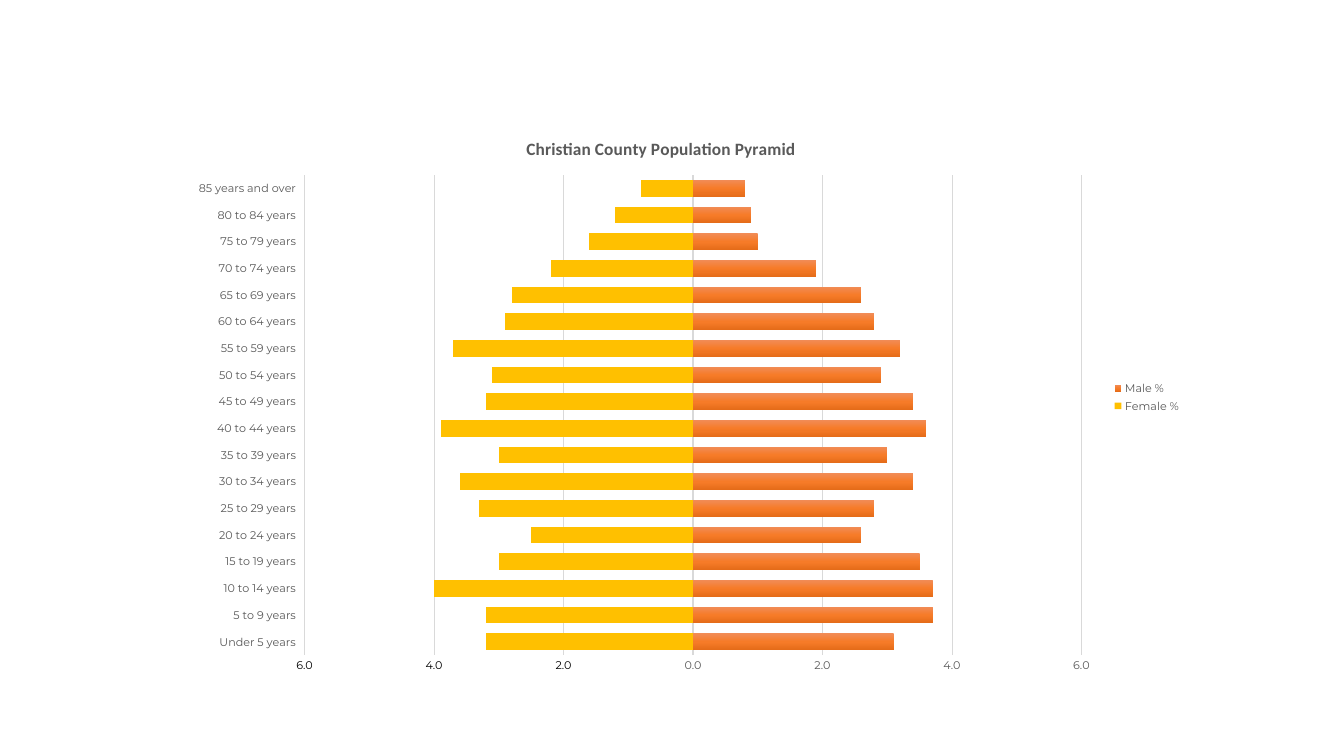
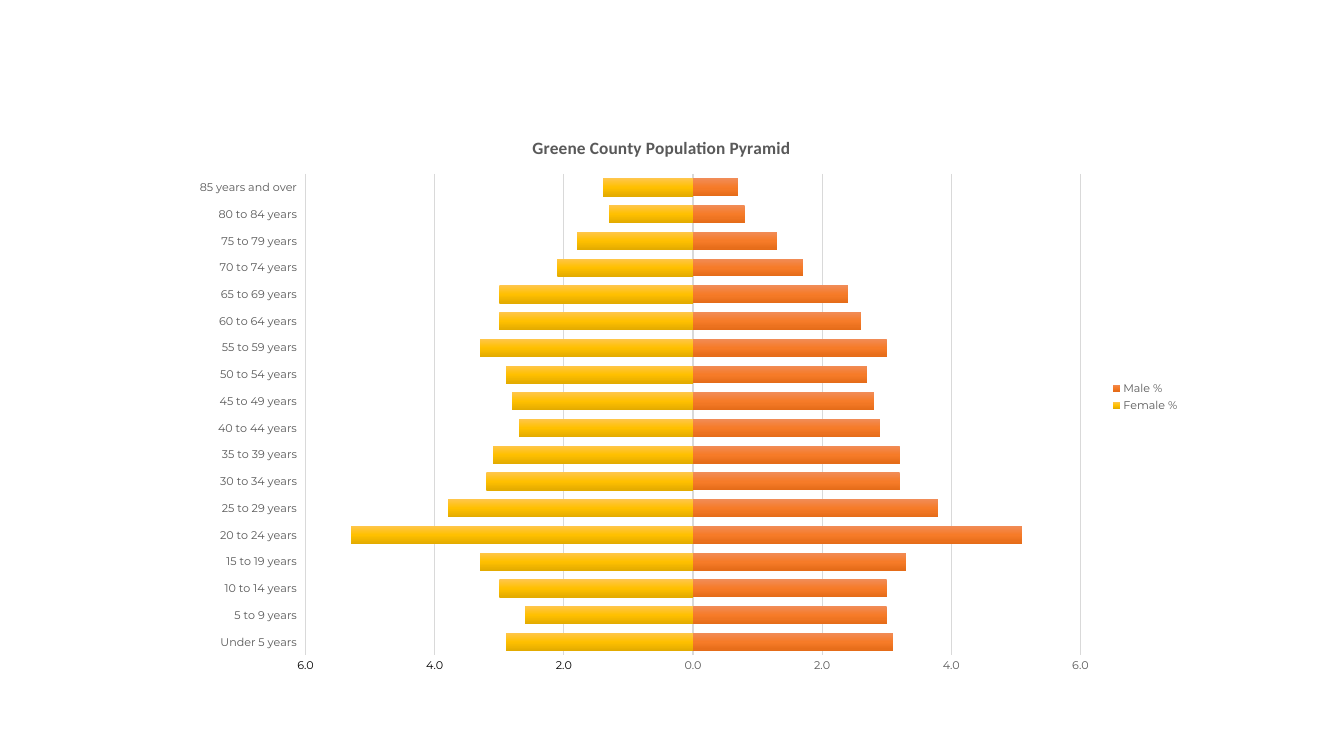
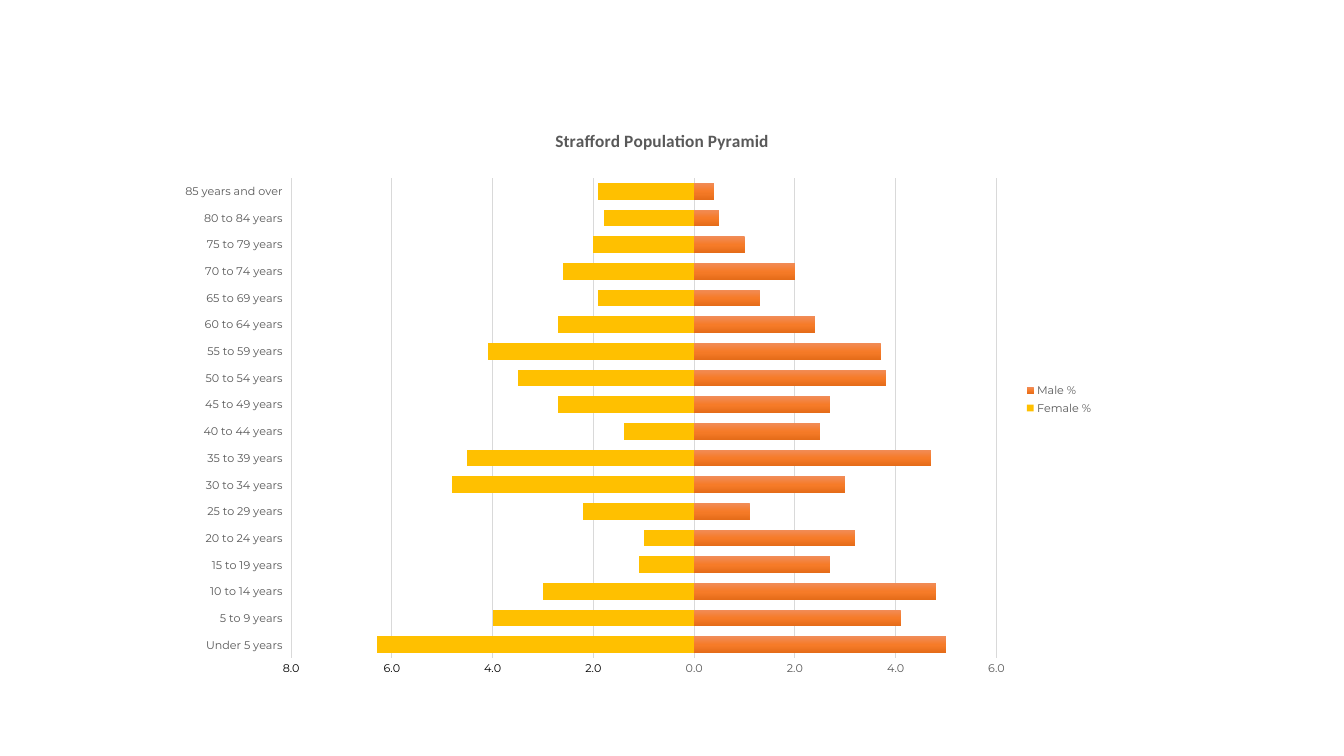
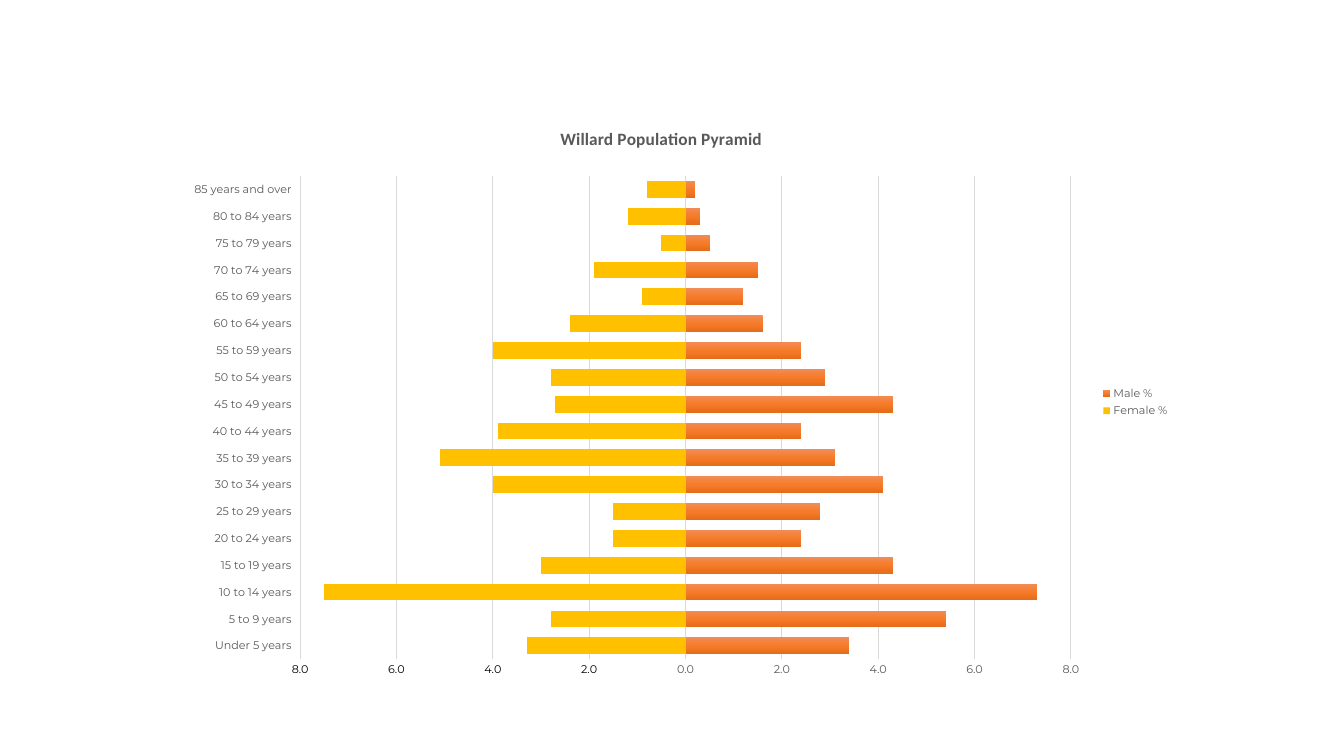
from dataclasses import dataclass

from lxml import etree
from pptx import Presentation
from pptx.chart.data import CategoryChartData
from pptx.dml.color import RGBColor
from pptx.enum.chart import XL_CHART_TYPE, XL_LEGEND_POSITION, XL_TICK_LABEL_POSITION, XL_TICK_MARK
from pptx.oxml.ns import qn
from pptx.util import Pt

BAR_STACKED = XL_CHART_TYPE.BAR_STACKED
LEGEND_RIGHT = XL_LEGEND_POSITION.RIGHT
LABELS_LOW = XL_TICK_LABEL_POSITION.LOW
NO_TICKS = XL_TICK_MARK.NONE

TITLE_FONT = "Calibri"
LABEL_FONT = "Montserrat"
TEXT_GRAY = "595959"
GRID_GRAY = "D9D9D9"
MALE_COLORS = ("F18C57", "F67B28", "E56C19")
FEMALE_COLORS = ("FFC64B", "FFC000", "E3AB00")
FEMALE_PLAIN = ("FFC000",)

AGE_GROUPS = (
    ["Under 5 years"]
    + [f"{age} to {age + 4} years" for age in range(5, 85, 5)]
    + ["85 years and over"]
)


@dataclass(frozen=True)
class Box:
    left: float
    top: float
    width: float
    height: float


@dataclass(frozen=True)
class Pyramid:
    place: str
    frame: Box
    plot: Box
    title_left: float
    title_top: float
    low: int
    high: int
    male: tuple[float, ...]
    female: tuple[float, ...]
    female_colors: tuple[str, ...] = FEMALE_PLAIN
    gap: int = 60


PYRAMIDS = (
    Pyramid(
        "Christian County", Box(125.3, 90, 838, 463), Box(246.6, 141.7, 628.9, 388.7),
        423.5, 108, -6, 6,
        (3.1, 3.7, 3.7, 3.5, 2.6, 2.8, 3.4, 3, 3.6, 3.4, 2.9, 3.2, 2.8, 2.6, 1.9, 1, 0.9, 0.8),
        (3.2, 3.2, 4, 3, 2.5, 3.3, 3.6, 3, 3.9, 3.2, 3.1, 3.7, 2.9, 2.8, 2.2, 1.6, 1.2, 0.8),
    ),
    Pyramid(
        "Greene County", Box(126, 89.3, 836, 463.7), Box(247.4, 140.9, 627.3, 389.6),
        428.5, 107.3, -6, 6,
        (3.1, 3, 3, 3.3, 5.1, 3.8, 3.2, 3.2, 2.9, 2.8, 2.7, 3, 2.6, 2.4, 1.7, 1.3, 0.8, 0.7),
        (2.9, 2.6, 3, 3.3, 5.3, 3.8, 3.2, 3.1, 2.7, 2.8, 2.9, 3.3, 3, 3, 2.1, 1.8, 1.3, 1.4),
        FEMALE_COLORS, 50,
    ),
    Pyramid(
        "Strafford", Box(115.2, 92.2, 777, 462.2), Box(235.7, 144.2, 571, 388.7),
        447, 101.8, -8, 6,
        (5, 4.1, 4.8, 2.7, 3.2, 1.1, 3, 4.7, 2.5, 2.7, 3.8, 3.7, 2.4, 1.3, 2, 1, 0.5, 0.4),
        (6.3, 4, 3, 1.1, 1, 2.2, 4.8, 4.5, 1.4, 2.7, 3.5, 4.1, 2.7, 1.9, 2.6, 2, 1.8, 1.9),
    ),
    Pyramid(
        "Willard", Box(122.4, 93.6, 831.6, 463.7), Box(243, 142.5, 624, 391.2),
        451, 100, -8, 8,
        (3.4, 5.4, 7.3, 4.3, 2.4, 2.8, 4.1, 3.1, 2.4, 4.3, 2.9, 2.4, 1.6, 1.2, 1.5, 0.5, 0.3, 0.2),
        (3.3, 2.8, 7.5, 3, 1.5, 1.5, 4, 5.1, 3.9, 2.7, 2.8, 4, 2.4, 0.9, 1.9, 0.5, 1.2, 0.8),
    ),
)


def rgb(color: str) -> RGBColor:
    return RGBColor.from_string(color)


def style_font(font, name: str, size: float, color: str = TEXT_GRAY, bold: bool = False) -> None:
    font.name = name
    font.size = Pt(size)
    font.bold = bold
    font.color.rgb = rgb(color)


def style_line(line, color: str, width: float) -> None:
    line.color.rgb = rgb(color)
    line.width = Pt(width)


def make_layout(settings: dict[str, str | float]):
    layout = etree.Element(qn("c:layout"))
    manual = etree.SubElement(layout, qn("c:manualLayout"))
    for tag, value in settings.items():
        etree.SubElement(manual, qn(f"c:{tag}")).set("val", str(value))
    return layout


def drop_layout(owner) -> None:
    for layout in owner.findall(qn("c:layout")):
        owner.remove(layout)


def place_plot(chart, plot: Box, frame: Box) -> None:
    area = chart.element.find(".//" + qn("c:plotArea"))
    drop_layout(area)
    area.insert(0, make_layout({
        "layoutTarget": "inner", "xMode": "edge", "yMode": "edge",
        "x": (plot.left - frame.left) / frame.width,
        "y": (plot.top - frame.top) / frame.height,
        "w": plot.width / frame.width,
        "h": plot.height / frame.height,
    }))


def add_title(chart, pyramid: Pyramid) -> None:
    frame = pyramid.frame
    chart.has_title = True
    title = chart.chart_title
    title.include_in_layout = False
    title.text_frame.text = f"{pyramid.place} Population Pyramid"
    style_font(title.text_frame.paragraphs[0].runs[0].font, TITLE_FONT, 14, bold=True)
    drop_layout(title.element)
    title.element.find(qn("c:tx")).addnext(make_layout({
        "xMode": "edge", "yMode": "edge",
        "x": (pyramid.title_left - frame.left) / frame.width,
        "y": (pyramid.title_top - frame.top) / frame.height,
    }))


def fill_series(series, colors: tuple[str, ...]) -> None:
    series.invert_if_negative = False
    fill = series.format.fill
    if len(colors) == 1:
        fill.solid()
        fill.fore_color.rgb = rgb(colors[0])
        return
    fill.gradient()
    fill.gradient_angle = 270
    stops = next(series._element.iter(qn("a:gsLst")))
    for stop in list(stops):
        stops.remove(stop)
    for index, color in enumerate(colors):
        stop = etree.SubElement(stops, qn("a:gs"), pos=str(100000 * index // (len(colors) - 1)))
        etree.SubElement(stop, qn("a:srgbClr"), val=color)


def style_axes(chart, low: int, high: int) -> None:
    ages, shares = chart.category_axis, chart.value_axis
    for axis in (ages, shares):
        axis.major_tick_mark = NO_TICKS
        axis.minor_tick_mark = NO_TICKS
        style_font(axis.tick_labels.font, LABEL_FONT, 9)
    ages.tick_label_position = LABELS_LOW
    style_line(ages.format.line, GRID_GRAY, 1)
    shares.minimum_scale = low
    shares.maximum_scale = high
    shares.major_unit = 2
    shares.has_major_gridlines = True
    style_line(shares.major_gridlines.format.line, GRID_GRAY, 0.75)
    shares.format.line.fill.background()
    shares.tick_labels.number_format = "#,##0.0;[Black]#,##0.0"
    shares.tick_labels.number_format_is_linked = False


def add_pyramid(slide, pyramid: Pyramid) -> None:
    data = CategoryChartData(number_format="0.0")
    data.categories = AGE_GROUPS
    data.add_series("Male %", pyramid.male)
    data.add_series("Female %", [-share for share in pyramid.female])
    frame = pyramid.frame
    chart = slide.shapes.add_chart(
        BAR_STACKED, Pt(frame.left), Pt(frame.top), Pt(frame.width), Pt(frame.height), data
    ).chart
    style_font(chart.font, TITLE_FONT, 10, "000000")
    add_title(chart, pyramid)
    place_plot(chart, pyramid.plot, frame)
    style_axes(chart, pyramid.low, pyramid.high)

    bars = chart.plots[0]
    bars.vary_by_categories = False
    bars.gap_width = pyramid.gap
    bars.overlap = 100
    for series, colors in zip(bars.series, (MALE_COLORS, pyramid.female_colors)):
        fill_series(series, colors)

    chart.has_legend = True
    chart.legend.position = LEGEND_RIGHT
    chart.legend.include_in_layout = False
    style_font(chart.legend.font, LABEL_FONT, 9)


def main() -> None:
    deck = Presentation()
    deck.slide_width = Pt(1088)
    deck.slide_height = Pt(612)
    blank = deck.slide_layouts[6]
    for pyramid in PYRAMIDS:
        add_pyramid(deck.slides.add_slide(blank), pyramid)
    deck.save("out.pptx")


if __name__ == "__main__":
    main()
